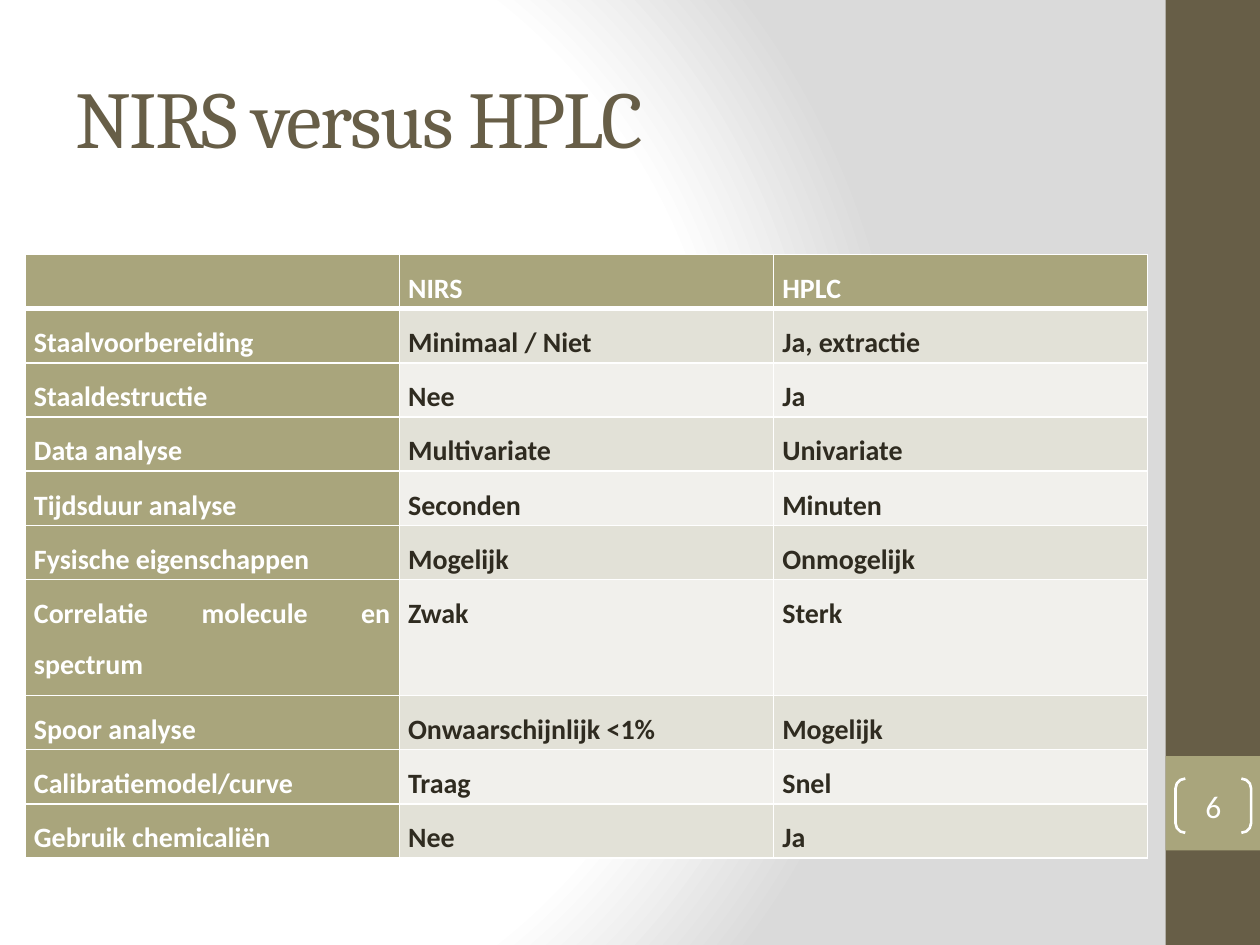
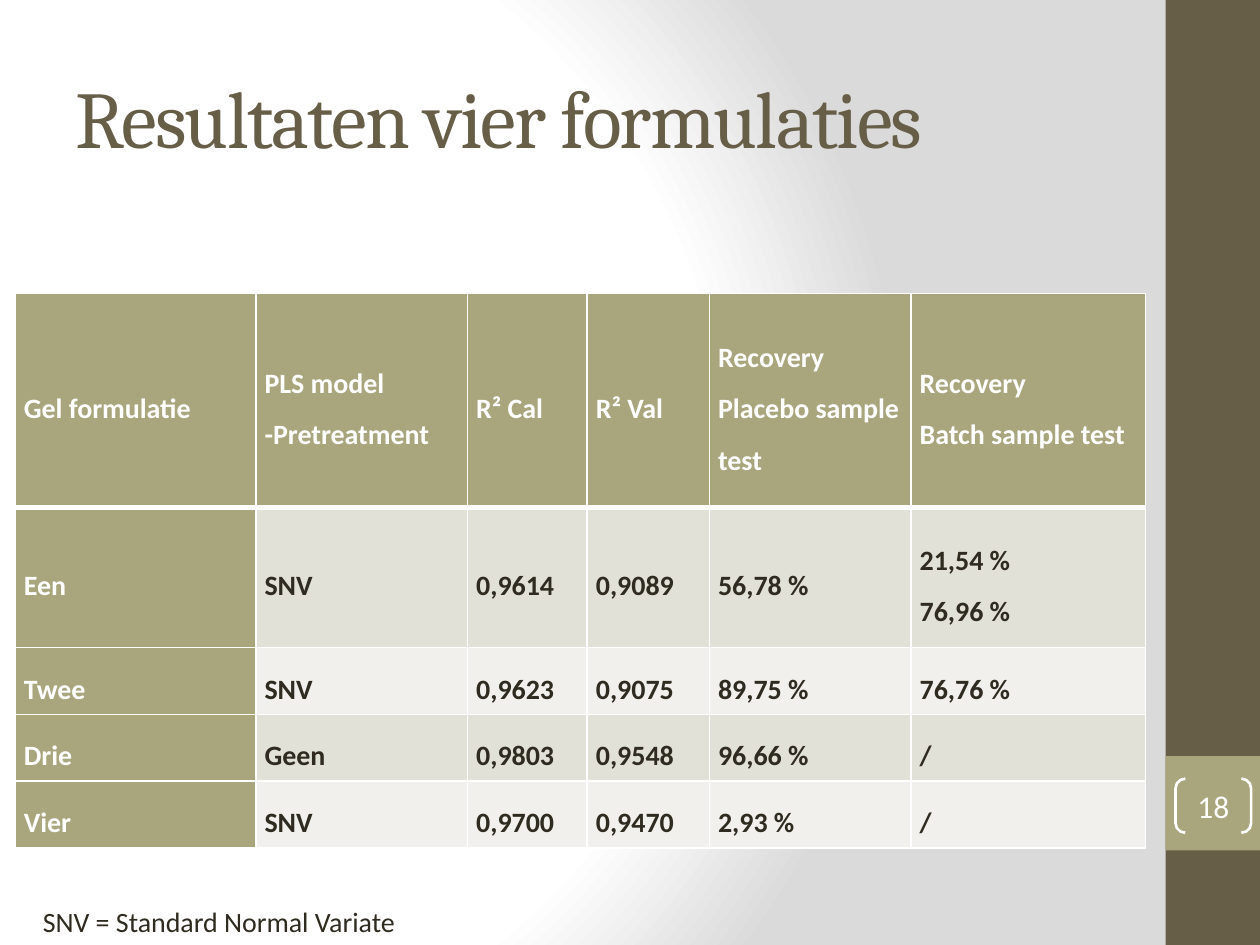
from pptx import Presentation
from pptx.dml.color import RGBColor
from pptx.enum.shapes import MSO_SHAPE
from pptx.enum.text import MSO_ANCHOR, PP_ALIGN
from pptx.oxml import parse_xml
from pptx.util import Inches, Pt

RECTANGLE = MSO_SHAPE.RECTANGLE
BRACKETS = MSO_SHAPE.DOUBLE_BRACKET
TOP, MIDDLE = MSO_ANCHOR.TOP, MSO_ANCHOR.MIDDLE
LEFT, CENTER, JUSTIFY = PP_ALIGN.LEFT, PP_ALIGN.CENTER, PP_ALIGN.JUSTIFY

BROWN, OLIVE, WHITE, INK = "675E47", "A9A57C", "FFFFFF", "2F2B20"
STRIPES = ("E2E1D7", "F1F0EC")
BACKGROUND_STOPS = ((0, WHITE), (75, WHITE), (100, "DADADA"))
HEADING_FONT, BODY_FONT = "Cambria", "Calibri"
SLIDE_W, SLIDE_H = 10, 7.5
BAND_W = 0.75

DRAWING_NS = 'xmlns:a="http://schemas.openxmlformats.org/drawingml/2006/main"'
SLIDE_NS = 'xmlns:p="http://schemas.openxmlformats.org/presentationml/2006/main"'

COMPARISON = [
    ["", "NIRS", "HPLC"],
    ["Staalvoorbereiding", "Minimaal / Niet", "Ja, extractie"],
    ["Staaldestructie", "Nee", "Ja"],
    ["Data analyse", "Multivariate", "Univariate"],
    ["Tijdsduur analyse", "Seconden", "Minuten"],
    ["Fysische eigenschappen", "Mogelijk", "Onmogelijk"],
    ["Correlatie molecule en spectrum", "Zwak", "Sterk"],
    ["Spoor analyse", "Onwaarschijnlijk <1%", "Mogelijk"],
    ["Calibratiemodel/curve", "Traag", "Snel"],
    ["Gebruik chemicaliën", "Nee", "Ja"],
]
# "\n" starts a paragraph, "\v" breaks a line
RESULTS = [
    ["Gel formulatie", "PLS model -Pretreatment", "R² Cal", "R² Val",
     "Recovery Placebo sample test", "Recovery\vBatch sample test"],
    ["Een", "SNV", "0,9614", "0,9089", "56,78 %", "21,54 %\n76,96 %"],
    ["Twee", "SNV", "0,9623", "0,9075", "89,75 %", "76,76 %"],
    ["Drie", "Geen", "0,9803", "0,9548", "96,66 %", "/"],
    ["Vier", "SNV", "0,9700", "0,9470", "2,93 %", "/"],
]


def rgb(hex_color):
    return RGBColor.from_string(hex_color)


def inches(box):
    return [Inches(length) for length in box]


def set_margins(target, left=0.1, right=0.1, top=0.05, bottom=0.05):
    target.margin_left, target.margin_right = Inches(left), Inches(right)
    target.margin_top, target.margin_bottom = Inches(top), Inches(bottom)


def write(frame, text, size, color, font=BODY_FONT, bold=False, align=LEFT,
          line_spacing=None, tracking=None):
    for index, line in enumerate(text.split("\n")):
        paragraph = frame.add_paragraph() if index else frame.paragraphs[0]
        paragraph.alignment = align
        paragraph.line_spacing = line_spacing
        for part_index, part in enumerate(line.split("\v")):
            if part_index:
                paragraph.add_line_break()
            run = paragraph.add_run()
            run.text = part
            run.font.name, run.font.size, run.font.bold = font, Pt(size), bold
            run.font.color.rgb = rgb(color)
            if tracking is not None:
                run.font.fill  # run properties exist before spacing is set
                run.font._element.set("spc", str(int(tracking * 100)))


def add_background(slide):
    stops = "".join(
        f'<a:gs pos="{pos * 1000}"><a:srgbClr val="{color}"/></a:gs>'
        for pos, color in BACKGROUND_STOPS)
    slide.element.cSld.insert(0, parse_xml(
        f'<p:bg {SLIDE_NS} {DRAWING_NS}><p:bgPr><a:gradFill rotWithShape="1">'
        f'<a:gsLst>{stops}</a:gsLst><a:path path="circle">'
        '<a:fillToRect l="20000" t="50000" r="100000" b="50000"/></a:path>'
        '</a:gradFill><a:effectLst/></p:bgPr></p:bg>'))


def add_band(slide, box, color):
    band = slide.shapes.add_shape(RECTANGLE, *inches(box))
    band.shadow.inherit = False
    band.fill.solid()
    band.fill.fore_color.rgb = rgb(color)
    band.line.fill.background()


def add_side_band(slide, number):
    left, badge_top = SLIDE_W - BAND_W, 6
    add_band(slide, (left, 0, BAND_W, SLIDE_H), BROWN)
    add_band(slide, (left, badge_top, BAND_W, BAND_W), OLIVE)
    page = slide.shapes.add_shape(
        BRACKETS, *inches((left + 0.08, badge_top + 0.18, 0.6, 0.43)))
    page.adjustments[0] = 0.18
    page.shadow.inherit = False
    page.fill.background()
    page.line.color.rgb = rgb(WHITE)
    page.line.width = Pt(1.5)
    set_margins(page.text_frame, 0, 0, 0, 0)
    page.text_frame.vertical_anchor = MIDDLE
    write(page.text_frame, str(number), 18, WHITE, align=CENTER)


def add_title(slide, title):
    frame = slide.shapes.add_textbox(*inches((0.5, 0.3, 8.33, 1.25))).text_frame
    frame.word_wrap = True
    frame.vertical_anchor = MIDDLE
    write(frame, title, 46, BROWN, HEADING_FONT, tracking=-1)


def set_borders(cell, top, bottom):
    """Draw white borders; top and bottom are widths in points."""
    properties = cell._tc.get_or_add_tcPr()
    for side, width in (("L", 1), ("R", 1), ("T", top), ("B", bottom)):
        properties.append(parse_xml(
            f'<a:ln{side} {DRAWING_NS} w="{Pt(width)}"><a:solidFill>'
            f'<a:srgbClr val="{WHITE}"/></a:solidFill></a:ln{side}>'))


def add_grid(slide, rows, left, top, widths, heights, align, anchor):
    table = slide.shapes.add_table(
        len(rows), len(widths),
        *inches((left, top, sum(widths), sum(heights)))).table
    for column, width in zip(table.columns, widths):
        column.width = Inches(width)
    for r, (texts, height) in enumerate(zip(rows, heights)):
        table.rows[r].height = Inches(height)
        for c, text in enumerate(texts):
            cell = table.cell(r, c)
            heading = r == 0 or c == 0
            set_borders(cell, top=3 if r == 1 else 1, bottom=3 if r == 0 else 1)
            cell.fill.solid()
            cell.fill.fore_color.rgb = rgb(OLIVE if heading else STRIPES[(r - 1) % 2])
            set_margins(cell, 0.07, 0.07, 0, 0)
            cell.vertical_anchor = anchor
            if text:
                write(cell.text_frame, text, 16, WHITE if heading else INK,
                      bold=True, align=align, line_spacing=1.5)


def add_footnote(slide, text):
    frame = slide.shapes.add_textbox(*inches((0.12, 7.13, 3.16, 0.37))).text_frame
    frame.word_wrap = True
    set_margins(frame, left=0.22, right=0)
    write(frame, text, 16, INK)


def add_base_slide(deck, title, number):
    slide = deck.slides.add_slide(deck.slide_layouts[6])
    add_background(slide)
    add_side_band(slide, number)
    add_title(slide, title)
    return slide


def add_comparison_slide(deck):
    slide = add_base_slide(deck, "NIRS versus HPLC", 6)
    heights = [0.92 if row[0].startswith("Correlatie") else 0.43
               for row in COMPARISON]
    add_grid(slide, COMPARISON, 0.2, 2.02, [2.97] * 3, heights, JUSTIFY, TOP)


def add_results_slide(deck):
    slide = add_base_slide(deck, "Resultaten vier formulaties", 18)
    add_grid(slide, RESULTS, 0.12, 2.33, [1.91, 1.68, 0.95, 0.97, 1.6, 1.86],
             [1.7, 1.11] + [0.53] * 3, LEFT, MIDDLE)
    add_footnote(slide, "SNV = Standard Normal Variate")


def main():
    deck = Presentation()
    deck.slide_width, deck.slide_height = Inches(SLIDE_W), Inches(SLIDE_H)
    add_comparison_slide(deck)
    add_results_slide(deck)
    deck.save("out.pptx")


if __name__ == "__main__":
    main()
